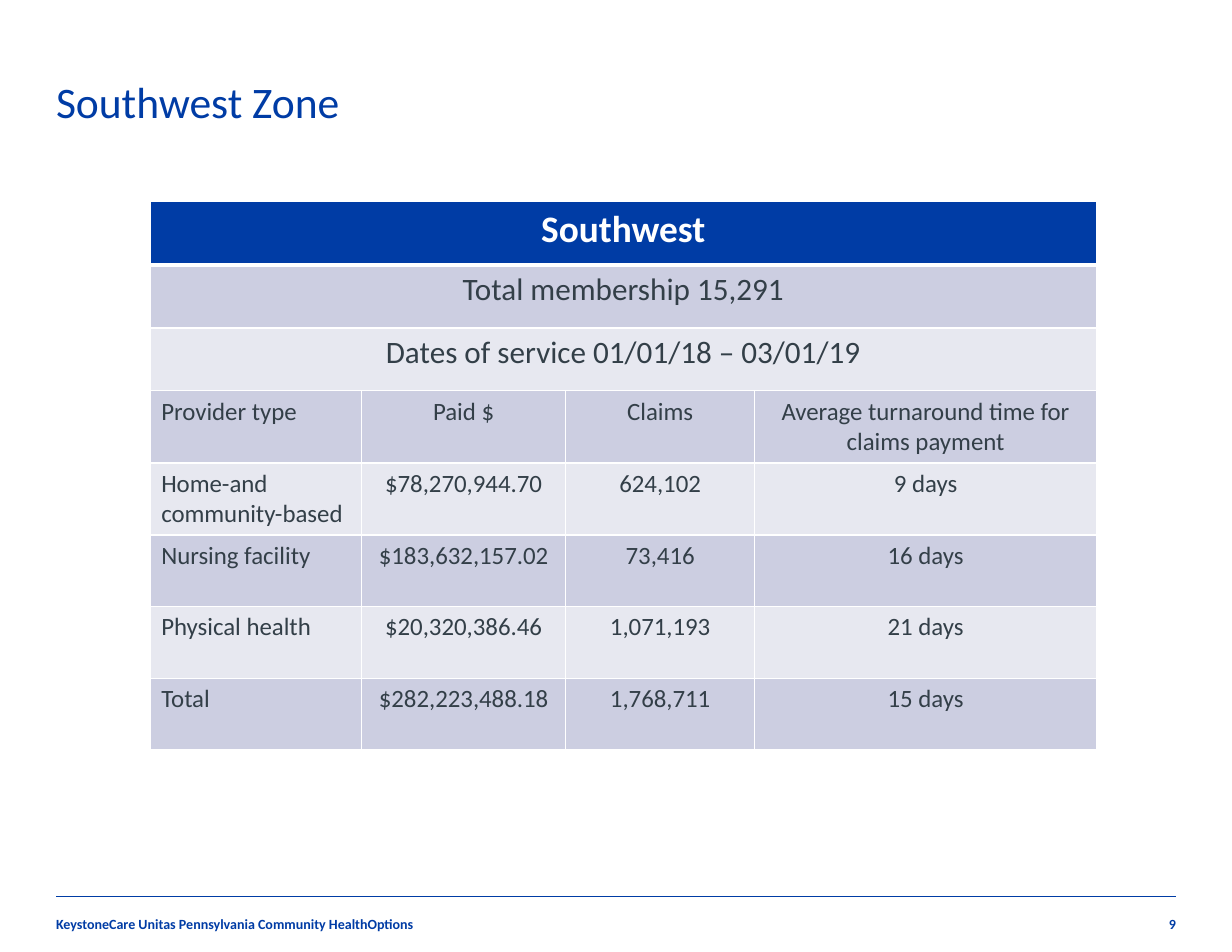
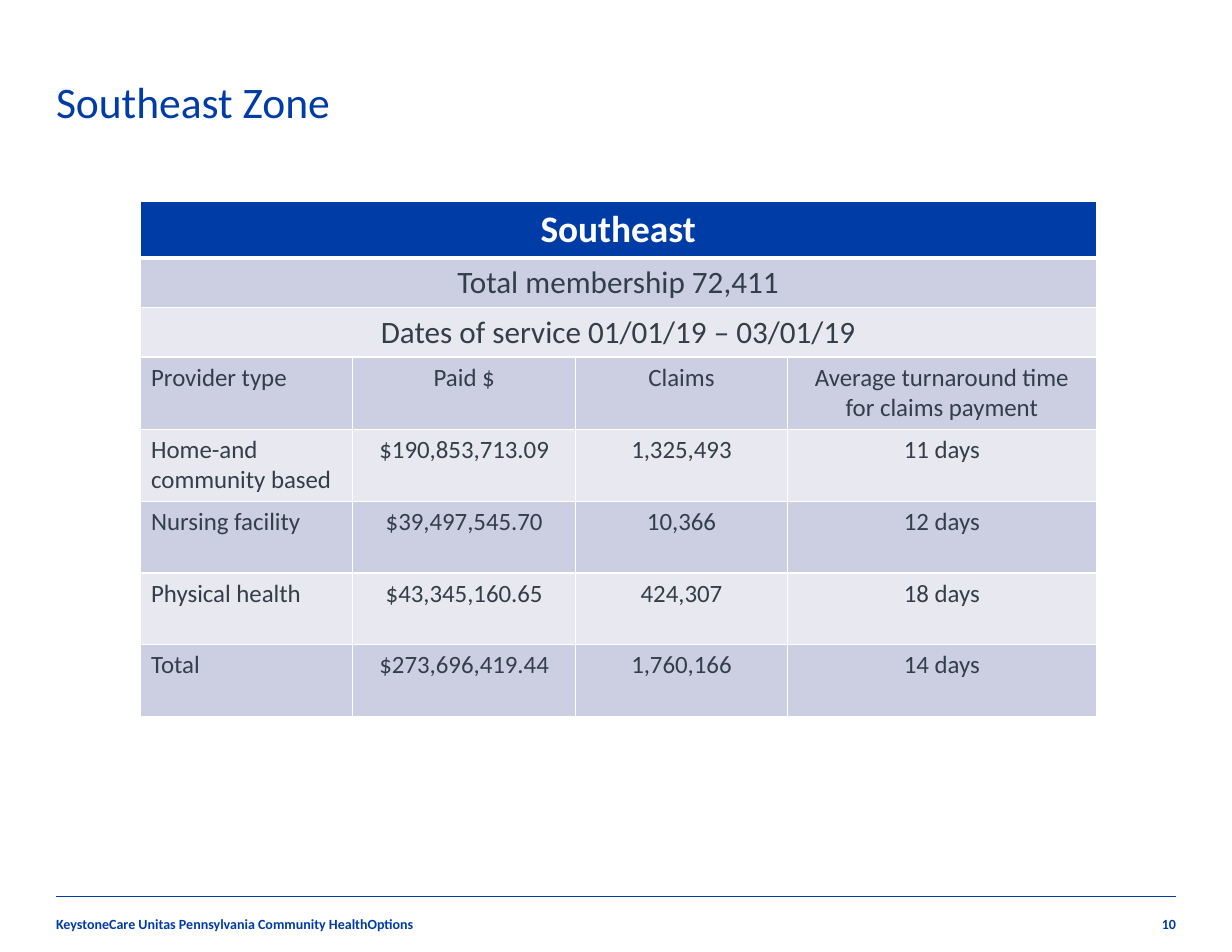
"""Build the two zone slides with their claims payment tables."""
from dataclasses import dataclass

import pptx
import pptx.dml.color
import pptx.enum.shapes
import pptx.enum.text
import pptx.oxml
import pptx.oxml.ns
import pptx.util
from pptx.dml.color import RGBColor
from pptx.util import Inches

BLUE = RGBColor(0x00, 0x3C, 0xA5)
WHITE = RGBColor(0xFF, 0xFF, 0xFF)
SLATE = RGBColor(0x33, 0x3F, 0x48)
BAND_DARK = RGBColor(0xCC, 0xCE, 0xE1)
BAND_LIGHT = RGBColor(0xE7, 0xE8, 0xF0)

FONT = "Calibri"
FOOTER = "KeystoneCare Unitas Pennsylvania Community HealthOptions"
HEADINGS = ("Provider type", "Paid $", "Claims", "Average turnaround time for claims payment")
BANNER_SIZES = (24, 20, 20)
TABLE_TOP = 1.8
DETAIL_HEIGHT = 0.64

LEFT = pptx.enum.text.PP_ALIGN.LEFT
CENTER = pptx.enum.text.PP_ALIGN.CENTER
RIGHT = pptx.enum.text.PP_ALIGN.RIGHT
MIDDLE = pptx.enum.text.MSO_ANCHOR.MIDDLE


@dataclass(frozen=True)
class Zone:
    name: str
    page: int
    membership: str
    dates: str
    left: float
    columns: tuple[float, ...]
    banner_heights: tuple[float, ...]
    rows: tuple[tuple[str, ...], ...]


ZONES = (
    Zone(
        "Southwest", 9, "15,291", "01/01/18 – 03/01/19", 1.34,
        (1.89, 1.82, 1.69, 3.05), (0.57, 0.56, 0.56),
        (
            ("Home-and community-based", "$78,270,944.70", "624,102", "9 days"),
            ("Nursing facility", "$183,632,157.02", "73,416", "16 days"),
            ("Physical health", "$20,320,386.46", "1,071,193", "21 days"),
            ("Total", "$282,223,488.18", "1,768,711", "15 days"),
        ),
    ),
    Zone(
        "Southeast", 10, "72,411", "01/01/19 – 03/01/19", 1.25,
        (1.9, 1.99, 1.89, 2.76), (0.5, 0.44, 0.44),
        (
            ("Home-and community based", "$190,853,713.09", "1,325,493", "11 days"),
            ("Nursing facility", "$39,497,545.70", "10,366", "12 days"),
            ("Physical health", "$43,345,160.65", "424,307", "18 days"),
            ("Total", "$273,696,419.44", "1,760,166", "14 days"),
        ),
    ),
)


def write(tf, text: str, size: float, color: RGBColor, bold: bool = False,
          align=LEFT, spacing: float = 1.0) -> None:
    p = tf.paragraphs[0]
    p.alignment = align
    p.line_spacing = spacing
    r = p.add_run()
    r.text = text
    r.font.name = FONT
    r.font.size = pptx.util.Pt(size)
    r.font.bold = bold
    r.font.color.rgb = color


def set_frame(tf) -> None:
    tf.word_wrap = True
    tf.auto_size = pptx.enum.text.MSO_AUTO_SIZE.NONE
    tf.vertical_anchor = MIDDLE
    tf.margin_left = tf.margin_top = tf.margin_right = tf.margin_bottom = 0


def add_title(s, text: str) -> None:
    sp = s.shapes.title
    sp.left, sp.top = Inches(0.5), Inches(0.5)
    sp.width, sp.height = Inches(7.13), Inches(0.87)
    set_frame(sp.text_frame)
    write(sp.text_frame, text, 28, BLUE, spacing=0.9)


def add_footer(s, page: int) -> None:
    line = s.shapes.add_connector(
        pptx.enum.shapes.MSO_CONNECTOR.STRAIGHT, Inches(0.5), Inches(8), Inches(10.5), Inches(8))
    line.line.color.rgb = BLUE
    line.line.width = pptx.util.Pt(0.5)
    line._element.spPr.append(pptx.oxml.parse_xml(
        f"<a:effectLst {pptx.oxml.ns.nsdecls('a')}/>"))
    for left, width, text, align in ((0.5, 3.71, FOOTER, LEFT), (8.03, 2.47, str(page), RIGHT)):
        sp = s.shapes.add_textbox(Inches(left), Inches(8), Inches(width), Inches(0.5))
        set_frame(sp.text_frame)
        write(sp.text_frame, text, 9, BLUE, bold=True, align=align)


def set_borders(cell, row: int) -> None:
    widths = {"L": 1, "R": 1, "T": 3 if row == 1 else 1, "B": 3 if row == 0 else 1}
    for side, width in widths.items():
        cell._tc.get_or_add_tcPr().append(pptx.oxml.parse_xml(
            f'<a:ln{side} {pptx.oxml.ns.nsdecls("a")} w="{pptx.util.Pt(width)}">'
            f'<a:solidFill><a:srgbClr val="{WHITE}"/></a:solidFill></a:ln{side}>'))


def add_zone_table(s, zone: Zone) -> None:
    banners = (zone.name, f"Total membership {zone.membership}", f"Dates of service {zone.dates}")
    details = (HEADINGS, *zone.rows)
    heights = zone.banner_heights + (DETAIL_HEIGHT,) * len(details)
    table = s.shapes.add_table(
        len(heights), len(zone.columns), Inches(zone.left), Inches(TABLE_TOP),
        Inches(sum(zone.columns)), Inches(sum(heights))).table
    for column, width in zip(table.columns, zone.columns):
        column.width = Inches(width)
    for i, height in enumerate(heights):
        table.rows[i].height = Inches(height)
        for cell in table.rows[i].cells:
            set_borders(cell, i)
            cell.fill.solid()
            cell.fill.fore_color.rgb = BLUE if i == 0 else BAND_DARK if i % 2 else BAND_LIGHT
    for i, (text, size) in enumerate(zip(banners, BANNER_SIZES)):
        table.cell(i, 0).merge(table.cell(i, len(zone.columns) - 1))
        write(table.cell(i, 0).text_frame, text, size, SLATE if i else WHITE,
              bold=i == 0, align=CENTER)
    for i, values in enumerate(details, start=len(banners)):
        for j, text in enumerate(values):
            write(table.cell(i, j).text_frame, text, 16, SLATE, align=CENTER if j else LEFT)


def main() -> None:
    prs = pptx.Presentation()
    prs.slide_width, prs.slide_height = Inches(11), Inches(8.5)
    for zone in ZONES:
        s = prs.slides.add_slide(prs.slide_layouts[5])
        add_title(s, f"{zone.name} Zone")
        add_footer(s, zone.page)
        add_zone_table(s, zone)
    prs.save("out.pptx")


if __name__ == "__main__":
    main()
